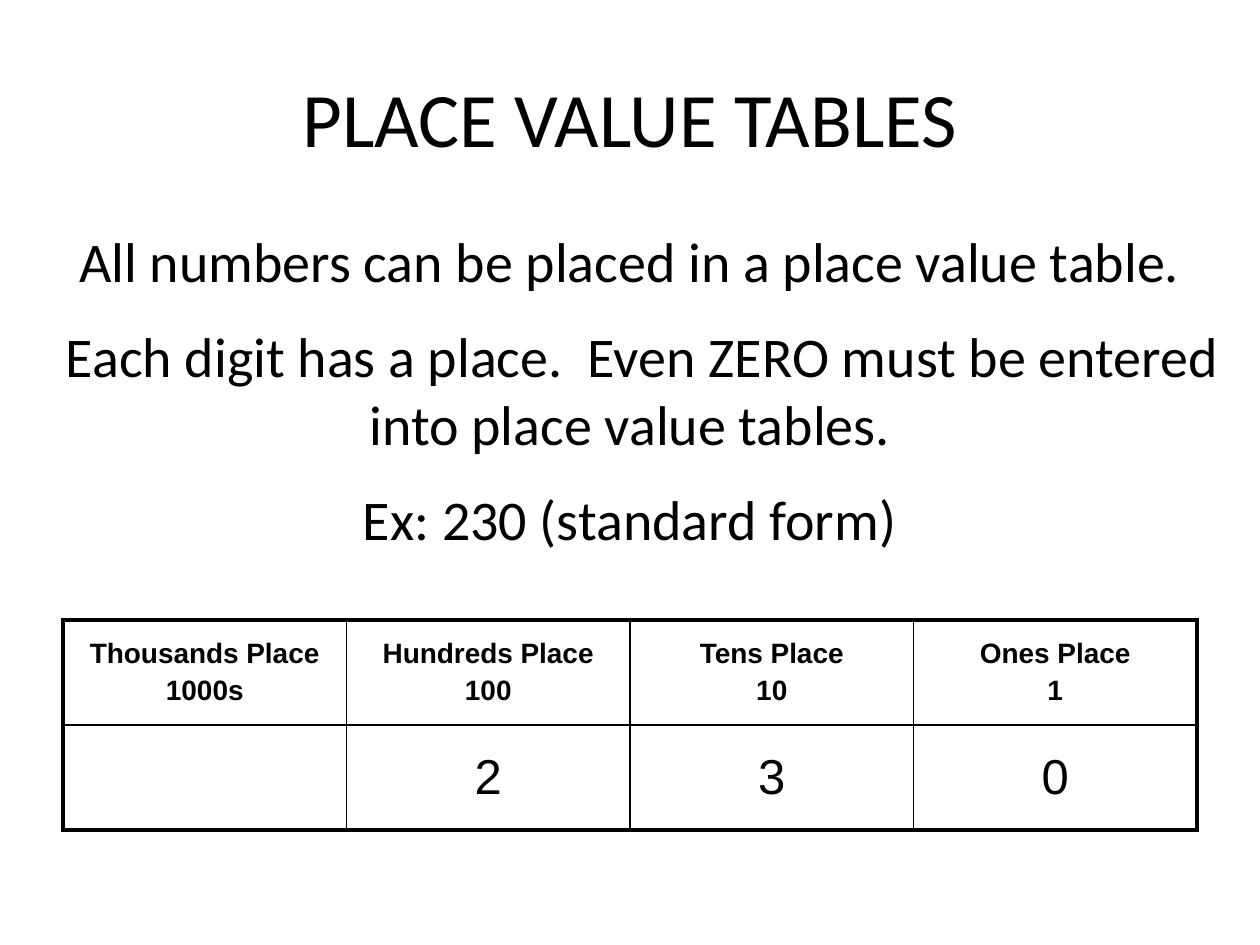
from lxml.etree import SubElement
from pptx import Presentation
from pptx.dml.color import RGBColor
from pptx.enum.text import MSO_ANCHOR, PP_ALIGN
from pptx.oxml.ns import qn
from pptx.util import Inches, Pt

WIDTH, HEIGHT = Inches(10), Inches(7.5)
BLACK = "000000"
PLACES = [
    (["Thousands Place", "1000s"], []),
    (["Hundreds Place", "100"], ["2"]),
    (["Tens Place", "10"], ["3"]),
    (["Ones Place", "1"], ["0"]),
]
STATEMENTS = [
    "All numbers can be placed in a place value table.",
    "Each digit has a place.  Even ZERO must be entered into place value tables.",
    "Ex: 230 (standard form)",
]


def color(value):
    return RGBColor.from_string(value)


def share(x, y, w, h):
    return int(x * WIDTH), int(y * HEIGHT), int(w * WIDTH), int(h * HEIGHT)


def write(tf, lines, size, font, gap=0, bold=False):
    for i, line in enumerate(lines):
        p = tf.add_paragraph() if i else tf.paragraphs[0]
        p.alignment = PP_ALIGN.CENTER
        p.space_before = Pt(size * gap if i else 0)
        r = p.add_run()
        r.text = line
        r.font.size = Pt(size)
        r.font.name = font
        r.font.bold = bold
        r.font.color.rgb = color(BLACK)


def add_title(slide, text):
    sp = slide.shapes.title
    sp.left, sp.top, sp.width, sp.height = share(0.05, 0.04, 0.9, 1 / 6)
    sp.text_frame.vertical_anchor = MSO_ANCHOR.MIDDLE
    write(sp.text_frame, [text], 44, "Calibri")


def add_statements(slide, lines):
    tf = slide.shapes.add_textbox(*share(0, 0.2333, 1, 0.3693)).text_frame
    tf.word_wrap = True
    write(tf, lines, 32, "Calibri", gap=0.5)
    tf.paragraphs[1]._p.get_or_add_pPr().set("indent", str(Inches(0.2)))


def set_borders(cell, widths):
    tcPr = cell._tc.get_or_add_tcPr()
    for i, (side, width) in enumerate(widths.items()):
        ln = tcPr.makeelement(qn(f"a:ln{side}"), {"w": str(Pt(width))})
        fill = SubElement(ln, qn("a:solidFill"))
        SubElement(fill, qn("a:srgbClr"), val=BLACK)
        tcPr.insert(i, ln)


def add_place_table(slide, places):
    rows, cols = 2, len(places)
    sp = slide.shapes.add_table(rows, cols, *share(0.05, 0.656, 0.9, 0.2222))
    table = sp.table
    table.first_row = table.horz_banding = False
    for col, entries in enumerate(places):
        for row, lines in enumerate(entries):
            cell = table.cell(row, col)
            cell.vertical_anchor = MSO_ANCHOR.MIDDLE
            cell.fill.background()
            write(cell.text_frame, lines, 28 if row else 16, "Arial",
                  gap=0.2, bold=row == 0)
            outer = {"L": col == 0, "R": col == cols - 1,
                     "T": row == 0, "B": row == rows - 1}
            set_borders(cell, {s: 2.25 if edge else 1 for s, edge in outer.items()})


def main():
    prs = Presentation()
    prs.slide_width, prs.slide_height = WIDTH, HEIGHT
    slide = prs.slides.add_slide(prs.slide_layouts[5])
    add_title(slide, "PLACE VALUE TABLES")
    add_place_table(slide, PLACES)
    add_statements(slide, STATEMENTS)
    prs.save("out.pptx")


if __name__ == "__main__":
    main()
